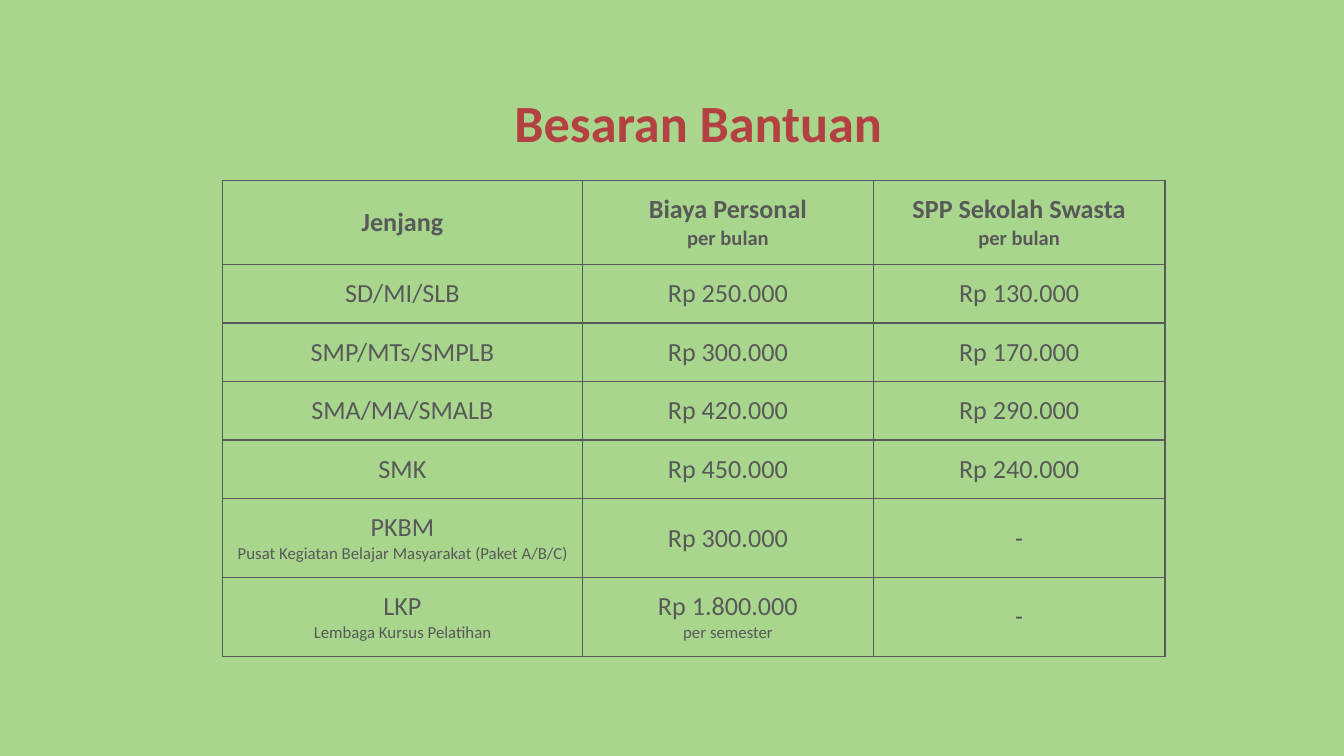
"""Build the slide listing education aid amounts by school level."""
from lxml.etree import SubElement
from pptx import Presentation
from pptx.dml.color import RGBColor
from pptx.enum.text import MSO_ANCHOR as Anchor, PP_ALIGN as Align
from pptx.oxml.ns import qn
from pptx.util import Pt

HEADING = "Besaran Bantuan"
HEADER = [["Jenjang"], ["Biaya Personal", "per bulan"], ["SPP Sekolah Swasta", "per bulan"]]
LEVELS = [
    [["SD/MI/SLB"], ["Rp 250.000"], ["Rp 130.000"]],
    [["SMP/MTs/SMPLB"], ["Rp 300.000"], ["Rp 170.000"]],
    [["SMA/MA/SMALB"], ["Rp 420.000"], ["Rp 290.000"]],
    [["SMK"], ["Rp 450.000"], ["Rp 240.000"]],
    [["PKBM", "Pusat Kegiatan Belajar Masyarakat (Paket A/B/C)"], ["Rp 300.000"], ["-"]],
    [["LKP", "Lembaga Kursus Pelatihan"], ["Rp 1.800.000", "per semester"], ["-"]],
]
COLORS = {"background": "A8D68C", "heading": "B44141", "ink": "595959"}
FONT = "Calibri"
MARGIN = 7.2
HEADING_BOX = (140.4, 47.5, 467.3, 48.2)
TABLE_LEFT, TABLE_TOP = 119.2, 96.6
COLUMN_WIDTHS = [192.8, 156, 156]
HEADER_HEIGHT, SINGLE_HEIGHT, DOUBLE_HEIGHT = 45, 31.4, 42.3
MARGINS = {f"margin_{side}": Pt(MARGIN) for side in ("left", "right", "top", "bottom")}


def assign(target, values):
    for name, value in values.items():
        setattr(target, name, value)


def write_lines(frame, lines, sizes, bold, color):
    for index, (line, size) in enumerate(zip(lines, sizes)):
        paragraph = frame.paragraphs[0] if index == 0 else frame.add_paragraph()
        paragraph.alignment = Align.CENTER
        run = paragraph.add_run()
        run.text = line
        assign(run.font, {"name": FONT, "size": Pt(size), "bold": bold})
        run.font.color.rgb = RGBColor.from_string(COLORS[color])


def add_borders(cell):
    properties = cell._tc.get_or_add_tcPr()
    for position, side in enumerate(("lnL", "lnR", "lnT", "lnB")):
        border = properties.makeelement(qn(f"a:{side}"), {"w": str(Pt(1))})
        properties.insert(position, border)
        fill = SubElement(border, qn("a:solidFill"))
        SubElement(fill, qn("a:srgbClr"), val=COLORS["ink"])


def add_heading(slide):
    frame = slide.shapes.add_textbox(*map(Pt, HEADING_BOX)).text_frame
    assign(frame, {"word_wrap": True, "vertical_anchor": Anchor.TOP, **MARGINS})
    write_lines(frame, [HEADING], [28], True, "heading")
    frame.paragraphs[0].line_spacing = 0.8


def add_aid_table(slide):
    rows = [HEADER, *LEVELS]
    heights = [HEADER_HEIGHT] + [
        DOUBLE_HEIGHT if any(len(lines) > 1 for lines in level) else SINGLE_HEIGHT
        for level in LEVELS
    ]
    bounds = (TABLE_LEFT, TABLE_TOP, sum(COLUMN_WIDTHS), sum(heights))
    table = slide.shapes.add_table(len(rows), len(HEADER), *map(Pt, bounds)).table
    assign(table, {"first_row": False, "horz_banding": False})
    for column, width in zip(table.columns, COLUMN_WIDTHS):
        column.width = Pt(width)
    for row, height, entries in zip(table.rows, heights, rows):
        row.height = Pt(height)
        is_header = entries is HEADER
        for cell, lines in zip(row.cells, entries):
            assign(cell, {"vertical_anchor": Anchor.MIDDLE, **MARGINS})
            cell.fill.background()
            add_borders(cell)
            write_lines(cell.text_frame, lines, [14, 11 if is_header else 9], is_header, "ink")


def main():
    deck = Presentation()
    assign(deck, {"slide_width": Pt(720), "slide_height": Pt(405)})
    slide = deck.slides.add_slide(deck.slide_layouts[6])
    slide.background.fill.solid()
    slide.background.fill.fore_color.rgb = RGBColor.from_string(COLORS["background"])
    add_heading(slide)
    add_aid_table(slide)
    deck.save("out.pptx")


if __name__ == "__main__":
    main()
